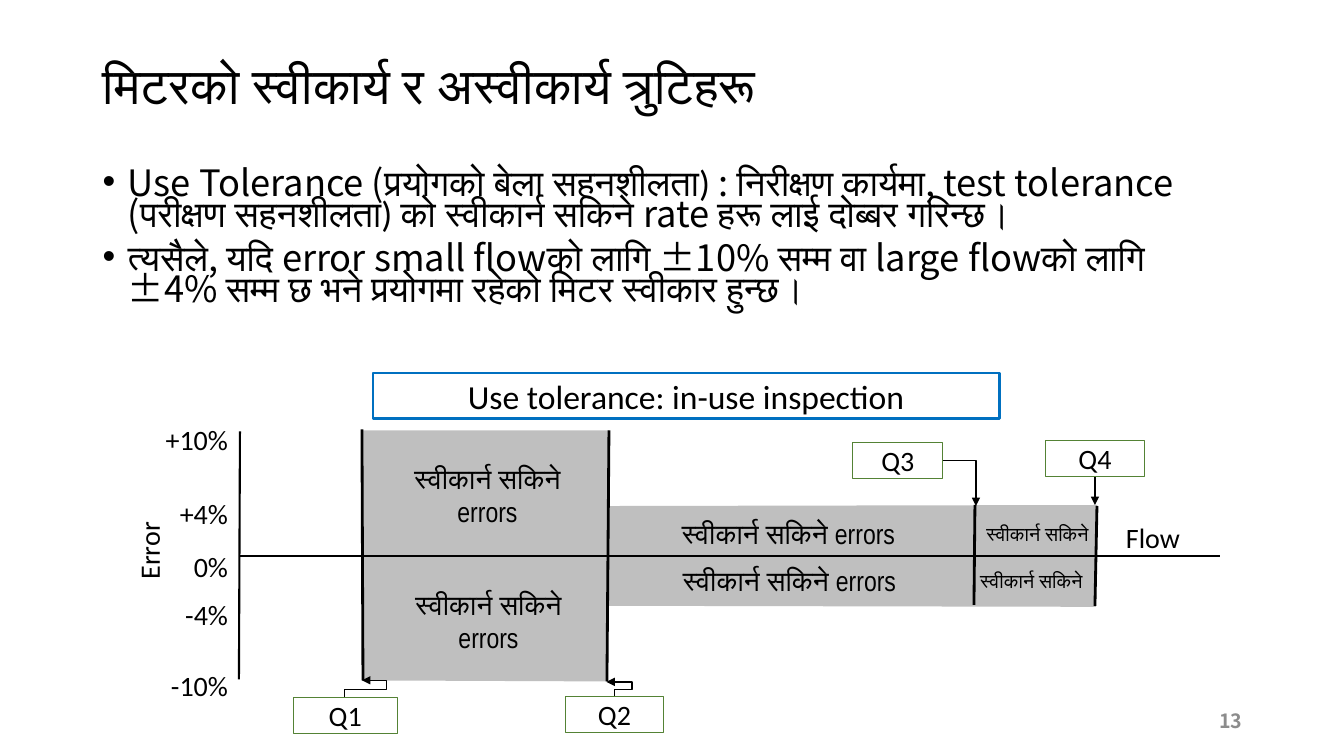
from dataclasses import dataclass

from lxml.etree import SubElement
from pptx import Presentation
from pptx.dml.color import RGBColor
from pptx.enum.shapes import MSO_CONNECTOR as Link, MSO_SHAPE as Preset
from pptx.enum.text import MSO_ANCHOR as Anchor, PP_ALIGN as Align
from pptx.oxml.ns import qn
from pptx.util import Inches, Pt

BLACK = RGBColor(0x00, 0x00, 0x00)
BAND_GRAY = RGBColor(0xBF, 0xBF, 0xBF)
BOX_GREEN = RGBColor(0x54, 0x82, 0x35)
HEADING_BLUE = RGBColor(0x00, 0x70, 0xC0)
NUMBER_GRAY = RGBColor(0x8C, 0x8C, 0x8C)
NOTO, CALIBRI, NARROW = "Noto Sans CJK JP", "Calibri", "Arial Narrow"
ACCEPTABLE = "स्वीकार्न सकिने"
ACCEPTABLE_ERRORS = f"{ACCEPTABLE} errors"


@dataclass
class Label:
    text: str
    left: float
    top: float
    width: float
    height: float
    size: float = 20
    font: str = CALIBRI
    align: Align = Align.CENTER
    anchor: Anchor = Anchor.MIDDLE
    color: RGBColor = BLACK
    bold: bool = False
    line_spacing: float = 1.0
    inset: float | None = None
    vertical: bool = False


@dataclass
class Box:
    label: Label
    line: RGBColor = BOX_GREEN
    weight: float = 0.75


@dataclass
class Line:
    x1: float
    y1: float
    x2: float
    y2: float
    weight: float
    arrow: bool = False
    kind: Link = Link.STRAIGHT
    preset: str = "line"
    rotation: int = 0
    adjust: tuple[float, ...] = ()


prs = Presentation()
prs.slide_width, prs.slide_height = Inches(13.33), Inches(7.5)
slide = prs.slides.add_slide(prs.slide_layouts[6])


def write(shape, label: Label) -> None:
    frame = shape.text_frame
    frame.word_wrap = True
    frame.vertical_anchor = label.anchor
    if label.inset is not None:
        frame.margin_left = frame.margin_right = Inches(label.inset)
        frame.margin_top = frame.margin_bottom = Inches(0)
    if label.vertical:
        frame._txBody.bodyPr.set("vert", "vert270")
    paragraph = frame.paragraphs[0]
    paragraph.text = label.text
    paragraph.alignment = label.align
    paragraph.line_spacing = label.line_spacing
    font = paragraph.font
    font.name, font.size, font.bold = label.font, Pt(label.size), label.bold
    font.color.rgb = label.color


def add_label(label: Label) -> None:
    place = map(Inches, (label.left, label.top, label.width, label.height))
    write(slide.shapes.add_textbox(*place), label)


def add_box(box: Box) -> None:
    label = box.label
    place = map(Inches, (label.left, label.top, label.width, label.height))
    shape = slide.shapes.add_shape(Preset.RECTANGLE, *place)
    shape.shadow.inherit = False
    shape.fill.background()
    shape.line.color.rgb = box.line
    shape.line.width = Pt(box.weight)
    write(shape, label)


def add_line(line: Line) -> None:
    ends = map(Inches, (line.x1, line.y1, line.x2, line.y2))
    connector = slide.shapes.add_connector(line.kind, *ends)
    connector.line.color.rgb = BLACK
    connector.line.width = Pt(line.weight)
    properties = connector._element.spPr
    if line.rotation:
        properties.find(qn("a:xfrm")).set("rot", str(line.rotation * 60000))
    geometry = properties.find(qn("a:prstGeom"))
    geometry.set("prst", line.preset)
    for number, value in enumerate(line.adjust, 1):
        SubElement(geometry.find(qn("a:avLst")), qn("a:gd"),
                   name=f"adj{number}", fmla=f"val {round(value * 100000)}")
    if line.arrow:
        SubElement(properties.find(qn("a:ln")), qn("a:tailEnd"), type="triangle")
    SubElement(properties, qn("a:effectLst"))


# Title
add_label(Label("मिटरको स्वीकार्य र अस्वीकार्य त्रुटिहरू", 0.92, 0.4, 11.5, 0.95,
                36, NOTO, Align.LEFT, line_spacing=0.9))

# Explanation bullets
BULLETS = [
    [("Use Tolerance (प्रयोगको बेला ", NOTO), ("सहनशीलता) ", CALIBRI),
     (": निरीक्षण कार्यमा, test tolerance (", NOTO), ("परीक्षण सहनशीलता) ", CALIBRI),
     ("को स्वीकार्न सकिने rate हरू लाई दोब्बर गरिन्छ।", NOTO)],
    [("त्यसैले, यदि error small flowको लागि ±10% सम्म वा large flowको लागि "
      "±4% सम्म छ भने प्रयोगमा रहेको मिटर स्वीकार हुन्छ।", NOTO)],
]
explanation = slide.shapes.add_textbox(
    Inches(0.92), Inches(1.66), Inches(11.5), Inches(1.94)).text_frame
explanation.word_wrap = True
for index, pieces in enumerate(BULLETS):
    bullet = explanation.add_paragraph() if index else explanation.paragraphs[0]
    bullet.line_spacing, bullet.space_before = 0.7, Pt(10)
    bullet.font.size, bullet.font.color.rgb = Pt(25.9), BLACK
    settings = bullet._p.get_or_add_pPr()
    settings.set("marL", str(Inches(0.25)))
    settings.set("indent", str(-Inches(0.25)))
    mark_font = SubElement(settings, qn("a:buFont"), typeface="Arial")
    mark = SubElement(settings, qn("a:buChar"), char="•")
    mark_font.addnext(mark)
    settings.append(settings.find(qn("a:defRPr")))
    for text, font_name in pieces:
        run = bullet.add_run()
        run.text = text
        run.font.name, run.font.size = font_name, Pt(25.9)
        run.font.color.rgb = BLACK

# Gray tolerance band
BAND = [(3.6, 4.27), (6.04, 4.27), (6.03, 5.02), (10.88, 5.01),
        (10.87, 6.02), (6.01, 6.01), (6.02, 6.76), (3.6, 6.75)]
corners = [(Inches(x), Inches(y)) for x, y in BAND]
outline = slide.shapes.build_freeform(*corners[0])
outline.add_line_segments(corners[1:])
band = outline.convert_to_shape()
band.shadow.inherit = False
band.fill.solid()
band.fill.fore_color.rgb = BAND_GRAY
band.line.fill.background()

# Axes, flow limits and arrows from the Q boxes
LINES = [
    Line(2.38, 4.28, 2.37, 6.74, 1.5),
    Line(2.38, 5.52, 12.1, 5.52, 1.5),
    Line(3.59, 4.26, 3.6, 6.75, 2),
    Line(6.04, 4.27, 6.02, 6.76, 2),
    Line(9.67, 5.01, 9.66, 6, 2),
    Line(10.88, 5.02, 10.86, 6.01, 2),
    Line(3.59, 6.92, 3.42, 6.75, 1, True, Link.ELBOW, "bentConnector4", 90, (0.48, 2.42)),
    Line(5.98, 6.88, 6.13, 6.8, 1, True, Link.ELBOW, "bentConnector4", 270, (0.5, -2.17)),
    Line(9.35, 4.57, 9.68, 5.02, 1, True, Link.ELBOW, "bentConnector2"),
    Line(10.86, 4.73, 10.86, 5.01, 1, True),
]
for line in LINES:
    add_line(line)

# Error scale
for text, top in [("+10%", 4.14), ("+4%", 4.88), ("0%", 5.4), ("-4%", 5.88), ("-10%", 6.58)]:
    add_label(Label(text, 1.48, top, 0.88, 0.34, align=Align.RIGHT, anchor=Anchor.TOP))

# Axis names, band texts and slide number
LABELS = [
    Label("Error", 1.23, 4.8, 0.49, 1.33, vertical=True),
    Label("Flow", 10.81, 5.06, 1.25, 0.54),
    Label(ACCEPTABLE_ERRORS, 3.93, 4.56, 1.81, 0.7, font=NARROW),
    Label(ACCEPTABLE_ERRORS, 3.94, 5.81, 1.81, 0.7, font=NARROW),
    Label(ACCEPTABLE_ERRORS, 6.56, 5.09, 2.52, 0.41, font=NARROW),
    Label(ACCEPTABLE_ERRORS, 6.58, 5.53, 2.5, 0.45, font=NARROW),
    Label(ACCEPTABLE, 9.5, 4.94, 1.58, 0.7, 14, NARROW),
    Label(ACCEPTABLE, 9.65, 5.53, 1.16, 0.47, 14, NARROW, inset=0),
    Label("13", 9.42, 6.95, 3, 0.4, 14, NOTO, Align.RIGHT, color=NUMBER_GRAY, bold=True),
]
for label in LABELS:
    add_label(label)

# Heading and Q boxes
BOXES = [
    Box(Label("Use tolerance: in-use inspection", 3.7, 3.7, 6.21, 0.45, 24, inset=0.04),
        HEADING_BLUE, 2),
    Box(Label("Q1", 2.91, 6.92, 1.03, 0.36, inset=0.04)),
    Box(Label("Q2", 5.61, 6.91, 0.97, 0.36, inset=0.04)),
    Box(Label("Q3", 8.46, 4.39, 0.89, 0.36, inset=0.04)),
    Box(Label("Q4", 10.37, 4.37, 0.98, 0.36, inset=0.04)),
]
for box in BOXES:
    add_box(box)

prs.save("out.pptx")
